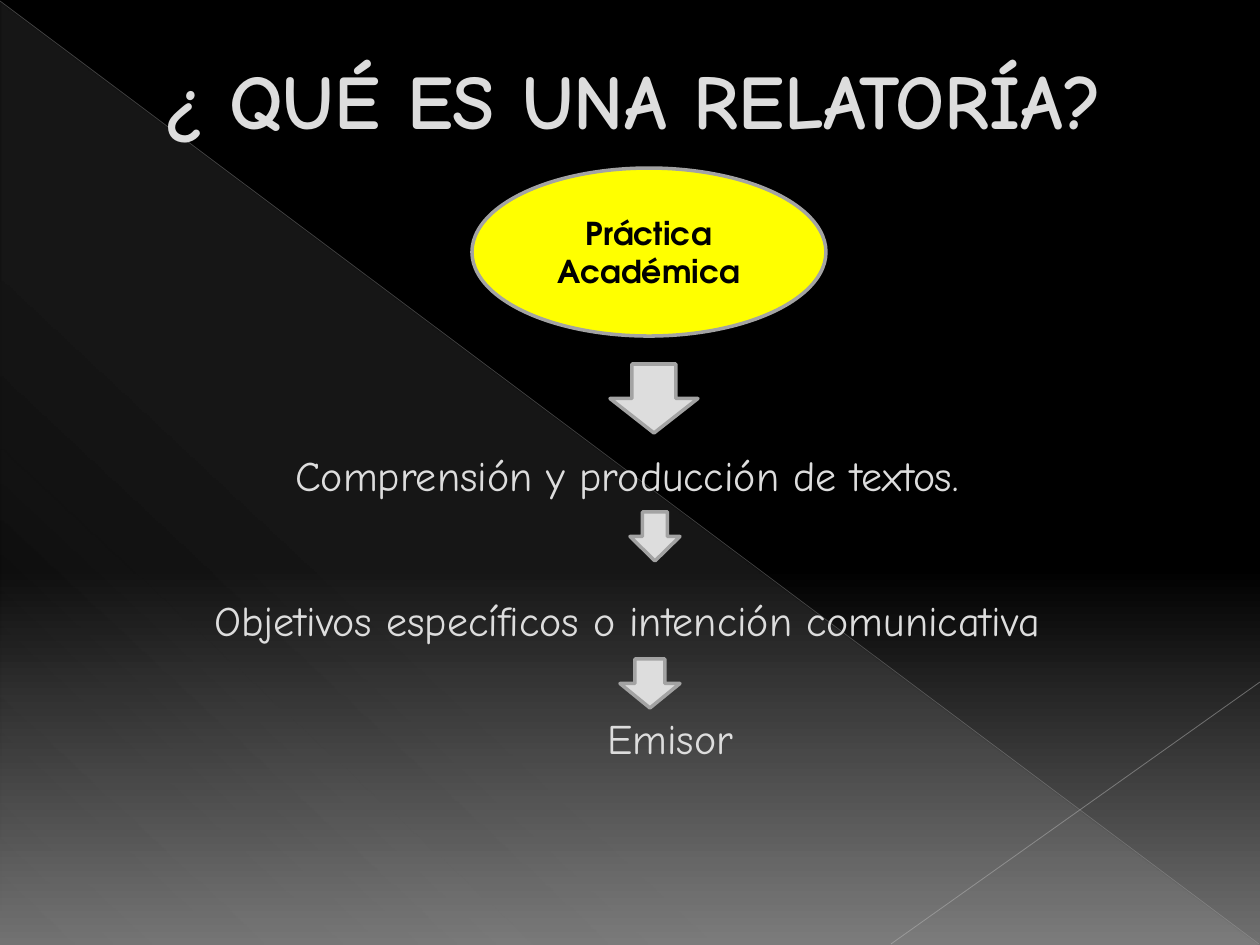
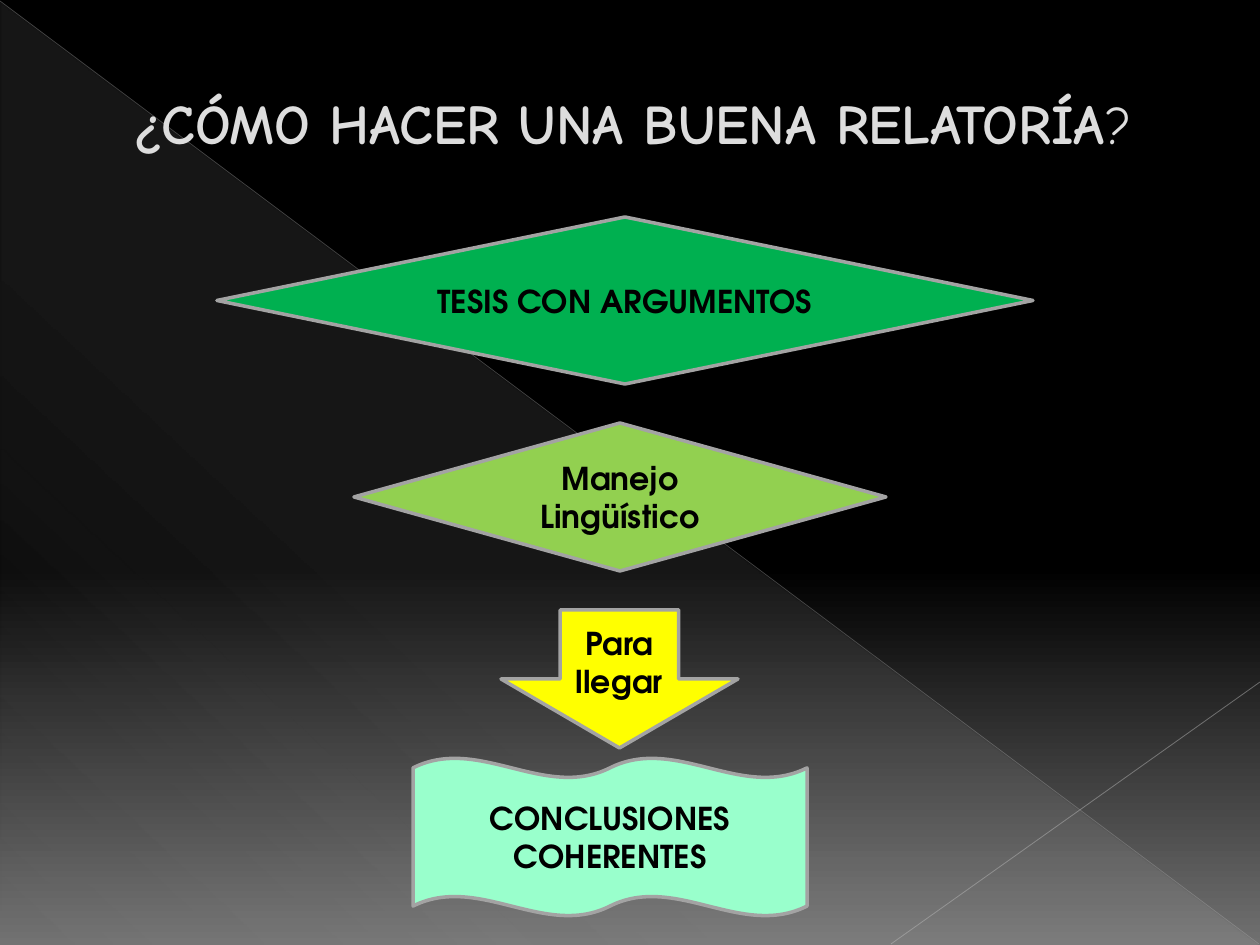
from dataclasses import dataclass

from lxml.etree import SubElement
from pptx import Presentation
from pptx.dml.color import RGBColor
from pptx.enum.shapes import MSO_CONNECTOR, MSO_SHAPE
from pptx.enum.text import MSO_ANCHOR, MSO_AUTO_SIZE, PP_ALIGN
from pptx.oxml.ns import qn
from pptx.util import Emu, Pt

EMU_PER_PX = 914400 / 126
TITLE_AND_CONTENT, TITLE_ONLY = 1, 5


def px(length):
    return Emu(round(length * EMU_PER_PX))


@dataclass(frozen=True)
class Theme:
    title_font: str = "Comic Neue"
    label_font: str = "TeX Gyre Adventor"
    text: str = "DDDDDD"
    label: str = "000000"
    outline: str = "A3A3A3"
    black: str = "000000"
    floor: str = "707070"
    veil: str = "F8F8F8"
    long_ray: str = "B4B4B4"
    short_ray: str = "BDBDBD"
    yellow: str = "FFFF00"
    green: str = "00B050"
    lime: str = "92D050"
    mint: str = "99FFCC"
    big_title: int = 44
    title: int = 32
    question_mark: int = 30
    step: int = 24
    label_size: int = 18
    outline_width: int = 2


THEME = Theme()


@dataclass(frozen=True)
class Box:
    left: int
    top: int
    width: int
    height: int

    def inner(self, left, top, width, height):
        """Box whose position is measured from this box's corner."""
        return Box(self.left + left, self.top + top, width, height)

    def emu(self):
        return [px(side) for side in (self.left, self.top, self.width, self.height)]


PAGE = Box(0, 0, 1260, 945)


def rgb(color):
    return RGBColor.from_string(color)


def add_alpha(color_element, percent):
    SubElement(color_element, qn("a:alpha")).set("val", str(percent * 1000))


def set_gradient(owner, fill, stops, angle):
    """Fill with (position, colour, opacity) stops, all in percent, at a clockwise angle."""
    fill.gradient()
    fill.gradient_angle = 360 - angle
    stop_list = next(owner.element.iter(qn("a:gsLst")))
    for default_stop in list(stop_list):
        stop_list.remove(default_stop)
    for position, color, opacity in stops:
        stop = SubElement(stop_list, qn("a:gs"))
        stop.set("pos", str(position * 1000))
        color_element = SubElement(stop, qn("a:srgbClr"))
        color_element.set("val", color)
        if opacity < 100:
            add_alpha(color_element, opacity)


def format_font(run, size, name, color, bold):
    font = run.font
    font.size, font.name, font.bold = Pt(size), name, bold
    font.color.rgb = rgb(color)


def add_ray(slide, start, end, color, width, opacity):
    ray = slide.shapes.add_connector(
        MSO_CONNECTOR.STRAIGHT, *(px(value) for value in (*start, *end)))
    ray.line.color.rgb = rgb(color)
    ray.line.width = Pt(width)
    add_alpha(next(ray.element.iter(qn("a:srgbClr"))), opacity)
    SubElement(ray.element.spPr, qn("a:effectLst"))
    return ray


def build_backdrop(master, slide, box):
    """Draw the shared backdrop on a slide and move it behind the master's parts."""
    set_gradient(master, master.background.fill,
                 [(0, THEME.black, 100), (60, THEME.black, 100), (100, THEME.floor, 100)], 90)
    veil = slide.shapes.add_shape(
        MSO_SHAPE.RIGHT_TRIANGLE, *box.inner(1, 2, box.width - 2, box.height - 2).emu())
    veil.shadow.inherit = False
    veil.line.fill.background()
    set_gradient(veil, veil.fill,
                 [(0, THEME.veil, 10), (70, THEME.veil, 8), (100, THEME.veil, 1)], 133)
    right, bottom = box.left + box.width, box.top + box.height - 1
    rays = [
        add_ray(slide, (box.left, box.top + 1), (right - 1, bottom), THEME.long_ray, 0.39, 35),
        add_ray(slide, (right, box.top + 682), (right - 369, bottom), THEME.short_ray, 0.47, 45),
    ]
    for order, part in enumerate([veil, *rays]):
        next(part.element.iter(qn("p:cNvPr"))).set("id", str(100 + order))
        master.shapes.element.insert(2 + order, part.element)


def place_text(placeholder, box):
    placeholder.left, placeholder.top, placeholder.width, placeholder.height = box.emu()
    frame = placeholder.text_frame
    frame.margin_left = frame.margin_right = frame.margin_top = frame.margin_bottom = 0
    frame.vertical_anchor = MSO_ANCHOR.TOP
    frame.auto_size = MSO_AUTO_SIZE.NONE
    frame.word_wrap = True
    return frame


def build_title(slide, box, text, size):
    paragraph = place_text(slide.shapes.title, box).paragraphs[0]
    paragraph.text = text
    paragraph.alignment = PP_ALIGN.CENTER
    paragraph.space_before = Pt(0)
    format_font(paragraph.runs[0], size, THEME.title_font, THEME.text, True)
    return paragraph


def build_steps(slide, box, steps):
    """Fill the body with (text, points before, px of left margin) lines."""
    frame = place_text(slide.placeholders[1], box)
    frame.text = "\n".join(text for text, _, _ in steps)
    for paragraph, (_, space_before, margin) in zip(frame.paragraphs, steps):
        paragraph.alignment = PP_ALIGN.CENTER
        paragraph.space_before = Pt(space_before)
        properties = paragraph._p.get_or_add_pPr()
        properties.set("marL", str(px(margin)))
        properties.set("indent", "0")
        SubElement(properties, qn("a:buNone"))
        format_font(paragraph.runs[0], THEME.step, THEME.title_font, THEME.text, False)


def build_flow(slide, box, figures):
    """Draw (kind, place in box, fill, label) figures."""
    for kind, place, color, label in figures:
        figure = slide.shapes.add_shape(kind, *box.inner(*place).emu())
        figure.shadow.inherit = False
        figure.fill.solid()
        figure.fill.fore_color.rgb = rgb(color)
        figure.line.color.rgb = rgb(THEME.outline)
        figure.line.width = Pt(THEME.outline_width)
        if label:
            figure.text_frame.text = label
            figure.text_frame.word_wrap = True
            figure.text_frame.vertical_anchor = MSO_ANCHOR.MIDDLE
            paragraph = figure.text_frame.paragraphs[0]
            paragraph.alignment = PP_ALIGN.CENTER
            format_font(paragraph.runs[0], THEME.label_size, THEME.label_font,
                        THEME.label, True)


def build_definition(slide, box):
    build_title(slide, box.inner(63, 53, 1140, 90), "¿ QUÉ ES UNA RELATORÍA?", THEME.big_title)
    build_steps(slide, box.inner(57, 450, 1140, 320), [
        ("Comprensión y producción de textos.", 0, 0),
        ("Objetivos específicos o intención comunicativa", 53.5, 0),
        ("Emisor", 39, 86),
    ])
    build_flow(slide, box.inner(472, 168, 354, 541), [
        (MSO_SHAPE.OVAL, (0, 0, 354, 168), THEME.yellow, "Práctica Académica"),
        (MSO_SHAPE.DOWN_ARROW, (138, 196, 88, 69), THEME.text, ""),
        (MSO_SHAPE.DOWN_ARROW, (158, 344, 50, 49), THEME.text, ""),
        (MSO_SHAPE.DOWN_ARROW, (148, 491, 60, 49), THEME.text, ""),
    ])


def build_method(slide, box):
    title = build_title(slide, box.inner(63, 89, 1140, 66),
                        "¿CÓMO HACER UNA BUENA RELATORÍA", THEME.title)
    question_mark = title.add_run()
    question_mark.text = "?"
    format_font(question_mark, THEME.question_mark, THEME.title_font, THEME.text, False)
    build_flow(slide, box.inner(217, 217, 816, 699), [
        (MSO_SHAPE.FLOWCHART_DECISION, (0, 0, 816, 167), THEME.green, "TESIS CON ARGUMENTOS"),
        (MSO_SHAPE.FLOWCHART_DECISION, (137, 206, 532, 148), THEME.lime, "Manejo Lingüístico"),
        (MSO_SHAPE.DOWN_ARROW, (284, 393, 237, 138), THEME.yellow, "Para llegar"),
        (MSO_SHAPE.DOUBLE_WAVE, (196, 541, 394, 158), THEME.mint, "CONCLUSIONES COHERENTES"),
    ])


def main():
    deck = Presentation()
    deck.slide_width, deck.slide_height = px(PAGE.width), px(PAGE.height)
    definition = deck.slides.add_slide(deck.slide_layouts[TITLE_AND_CONTENT])
    method = deck.slides.add_slide(deck.slide_layouts[TITLE_ONLY])
    build_backdrop(deck.slide_master, definition, PAGE)
    build_definition(definition, PAGE)
    build_method(method, PAGE)
    deck.save("out.pptx")


if __name__ == "__main__":
    main()
